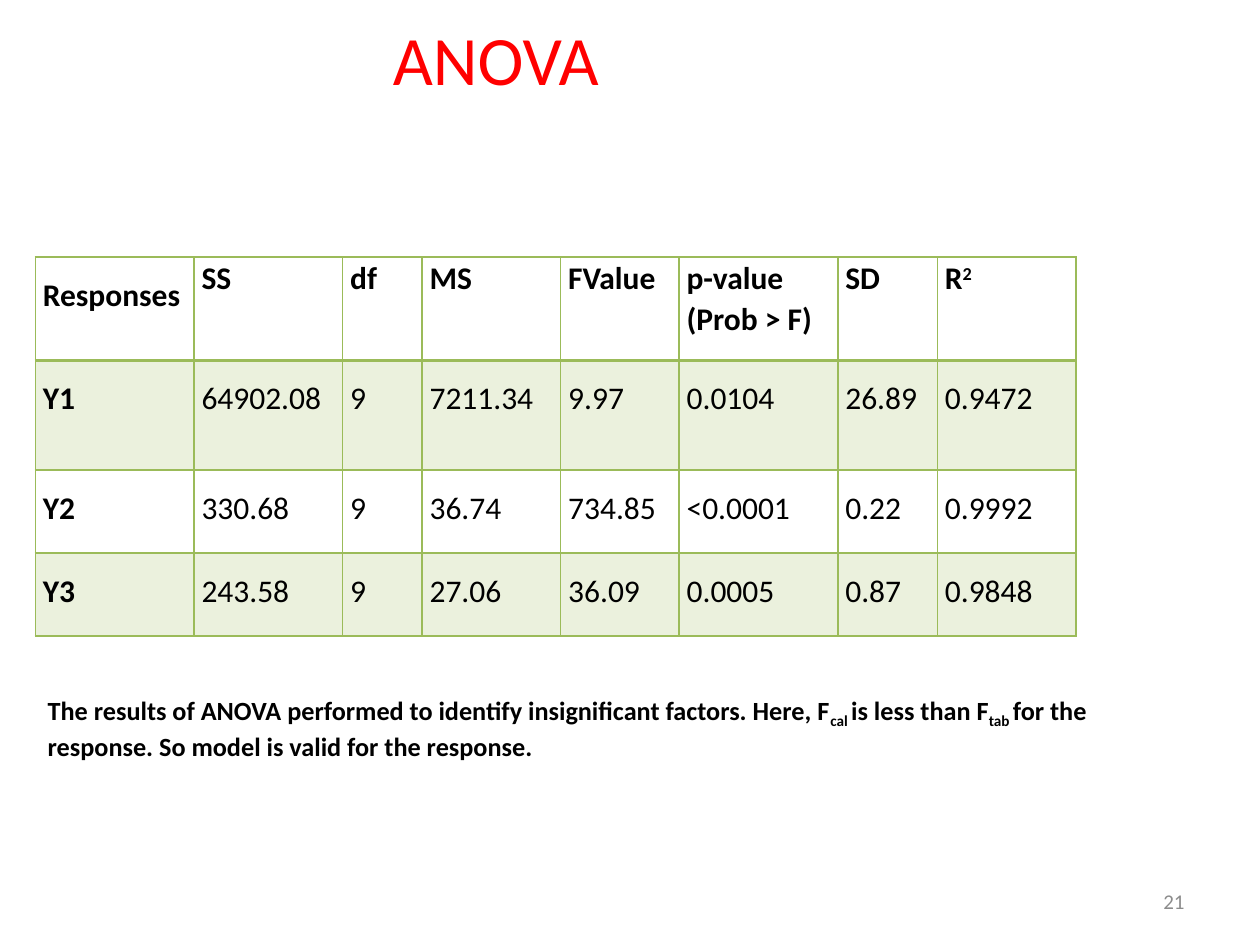
from lxml.etree import SubElement
from pptx import Presentation
from pptx.dml.color import RGBColor as RGB
from pptx.enum.text import MSO_ANCHOR as ANCHOR, PP_ALIGN as ALIGN
from pptx.oxml.ns import qn
from pptx.util import Inches, Pt

COLORS = {"title": "FF0000", "text": "000000", "number": "8C8C8C", "green": "9BBB59"}
TITLE = {"size": Pt(39.6), "name": "Calibri", "bold": False}
BODY = {"size": Pt(18), "name": "Calibri", "bold": False}
HEAD = {**BODY, "bold": True}
NOTE = {**HEAD, "size": Pt(15)}
NUMBER = {**BODY, "size": Pt(12)}

COL_WIDTHS = [1.26, 1.18, 0.63, 1.1, 0.94, 1.26, 0.79, 1.1]
ROW_HEIGHTS = [0.82, 0.87, 0.66, 0.66]
ROWS = [
    ["Responses", "SS", "df", "MS", "FValue", "p-value\n(Prob > F)", "SD", "R|2"],
    ["Y1", "64902.08", "9", "7211.34", "9.97", "0.0104", "26.89", "0.9472"],
    ["Y2", "330.68", "9", "36.74", "734.85", "<0.0001", "0.22", "0.9992"],
    ["Y3", "243.58", "9", "27.06", "36.09", "0.0005", "0.87", "0.9848"],
]
NOTE_TEXT = (
    "The results of ANOVA performed to identify insignificant factors. Here, F|cal "
    "|is less than F|tab |for the response. So model is valid for the response."
)


def write_paragraph(p, text, fmt, color="text", shift=0, **layout):
    for key, value in layout.items():
        setattr(p, key, value)
    for i, part in enumerate(text.split("|")):
        r = p.add_run()
        r.text = part
        for key, value in fmt.items():
            setattr(r.font, key, value)
        r.font.color.rgb = RGB.from_string(COLORS[color])
        if i % 2:
            r._r.get_or_add_rPr().set("baseline", str(shift * 1000))


def add_text(s, box, text, fmt, color="text", anchor=ANCHOR.TOP, **style):
    tf = s.shapes.add_textbox(*map(Inches, box)).text_frame
    tf.word_wrap = True
    tf.vertical_anchor = anchor
    write_paragraph(tf.paragraphs[0], text, fmt, color, **style)


def set_borders(cell, bottom):
    tcPr = cell._tc.get_or_add_tcPr()
    for side, width in zip("LRTB", (1, 1, 1, bottom)):
        ln = SubElement(tcPr, qn(f"a:ln{side}"), w=str(Pt(width)))
        fill = SubElement(ln, qn("a:solidFill"))
        SubElement(fill, qn("a:srgbClr"), val=COLORS["green"])


def fill_cell(cell, banded):
    if not banded:
        cell.fill.background()
        return
    cell.fill.solid()
    cell.fill.fore_color.rgb = RGB.from_string(COLORS["green"])
    clr = cell._tc.tcPr.find(qn("a:solidFill")).find(qn("a:srgbClr"))
    SubElement(clr, qn("a:alpha"), val="20000")


def add_anova_table(s, box):
    table = s.shapes.add_table(len(ROWS), len(COL_WIDTHS), *map(Inches, box)).table
    table.first_row = table.horz_banding = False
    for col, width in zip(table.columns, COL_WIDTHS):
        col.width = Inches(width)
    for i, (row, height) in enumerate(zip(table.rows, ROW_HEIGHTS)):
        row.height = Inches(height)
        for j, (cell, text) in enumerate(zip(row.cells, ROWS[i])):
            cell.margin_left = cell.margin_right = Inches(0.06)
            cell.margin_top = cell.margin_bottom = 0
            set_borders(cell, bottom=2 if i == 0 else 1)
            fill_cell(cell, banded=i % 2 == 1)
            heading = i == 0 and j > 0
            layout = {
                "alignment": ALIGN.LEFT if heading else ALIGN.JUSTIFY,
                "line_spacing": 1.07 if heading else 1.5,
            }
            fmt = HEAD if i == 0 or j == 0 else BODY
            tf = cell.text_frame
            for k, line in enumerate(text.split("\n")):
                p = tf.add_paragraph() if k else tf.paragraphs[0]
                write_paragraph(p, line, fmt, shift=30, **layout)


def main():
    prs = Presentation()
    prs.slide_width, prs.slide_height = Inches(10), Inches(7.5)
    s = prs.slides.add_slide(prs.slide_layouts[6])
    add_text(s, (0.28, 0.15, 7.31, 0.62), "ANOVA", TITLE, "title",
             ANCHOR.MIDDLE, alignment=ALIGN.CENTER)
    add_anova_table(s, (0.28, 2.04, sum(COL_WIDTHS), sum(ROW_HEIGHTS)))
    add_text(s, (0.28, 5.46, 9.29, 0.86), NOTE_TEXT, NOTE, shift=-25)
    add_text(s, (7.17, 6.95, 2.33, 0.4), "21", NUMBER, "number",
             ANCHOR.MIDDLE, alignment=ALIGN.RIGHT)
    prs.save("out.pptx")


if __name__ == "__main__":
    main()
